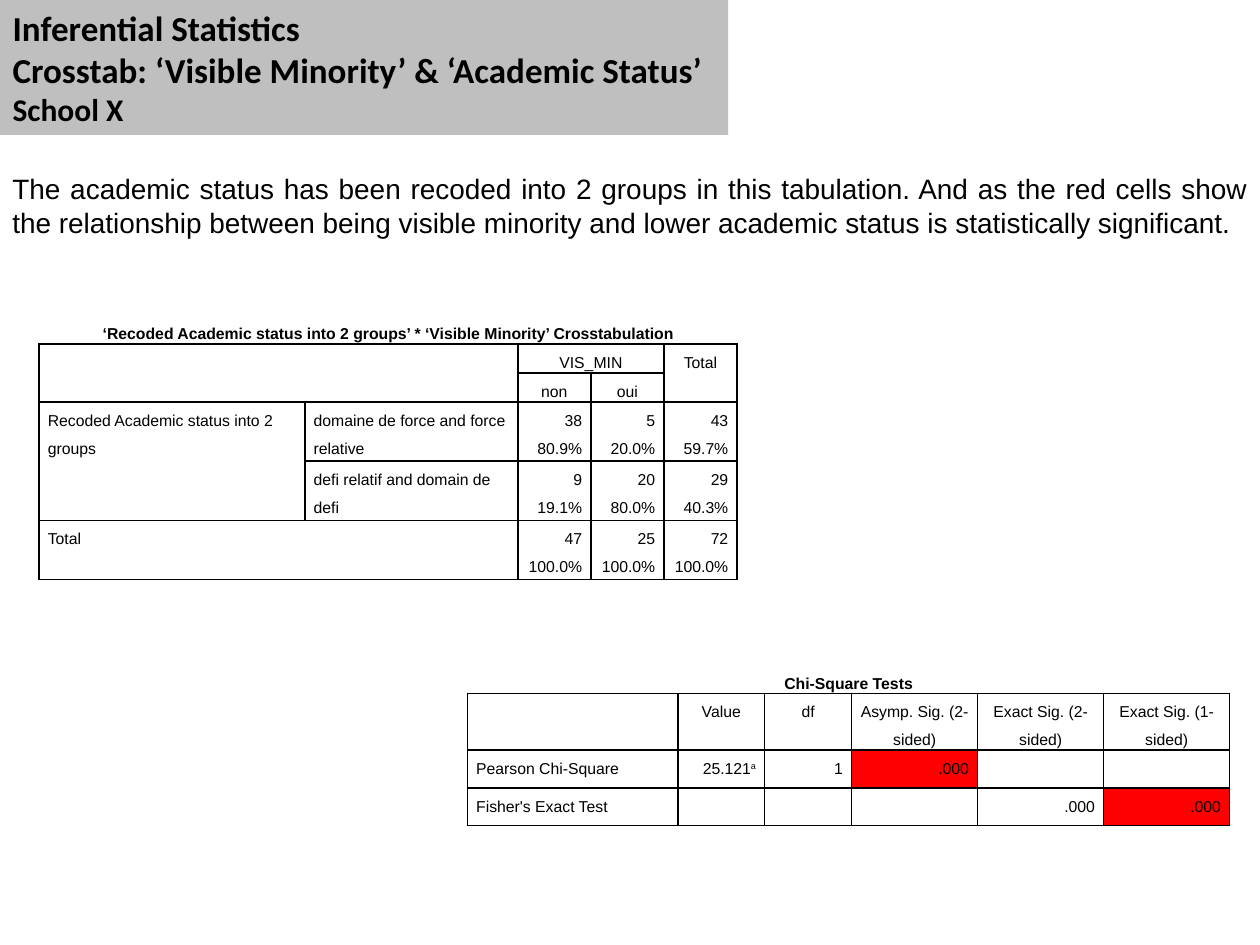
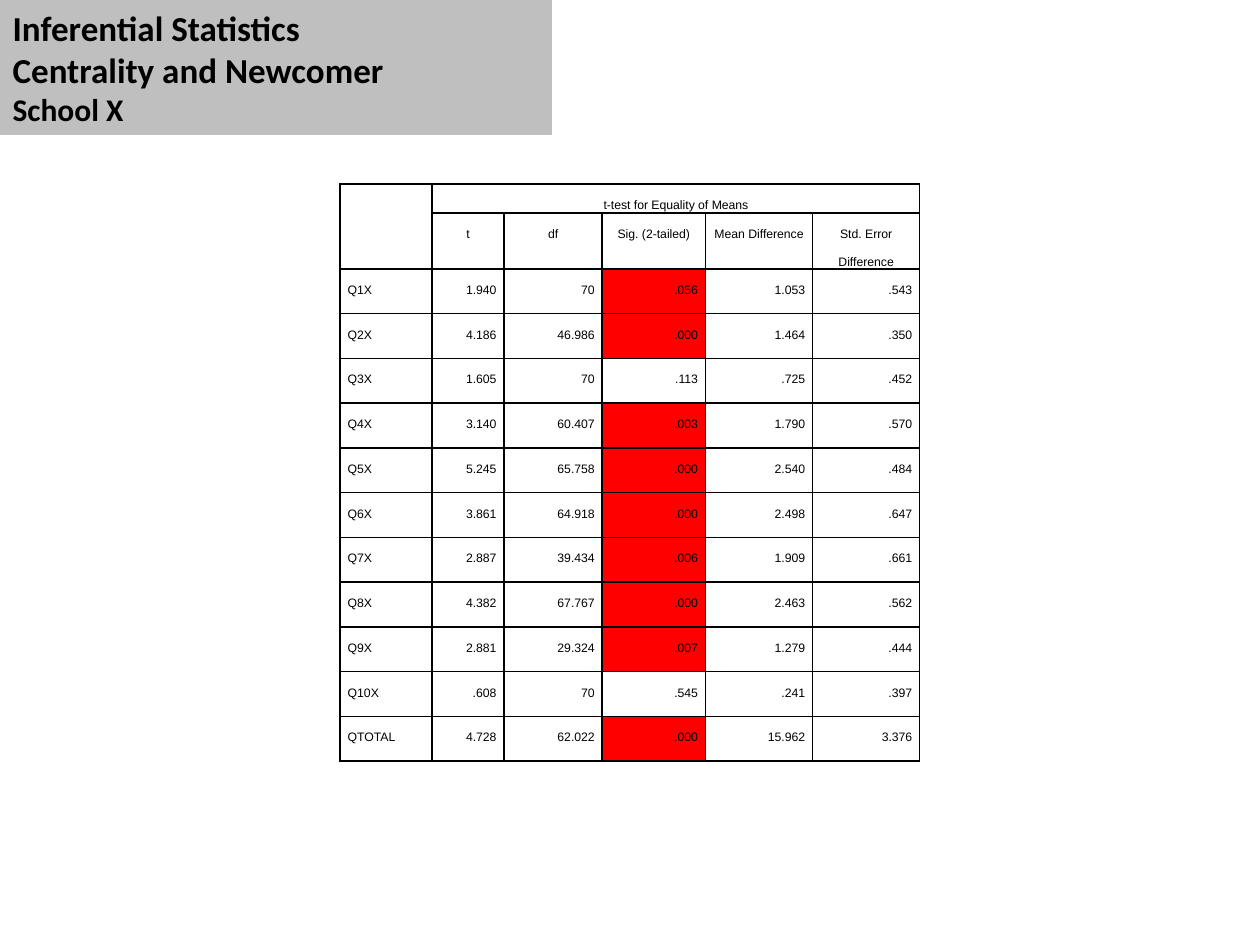
"""Build two slides of inferential statistics: a crosstab, a chi-square table and a t-test table."""
import lxml.etree
import pptx
import pptx.dml.color
import pptx.enum.text
import pptx.oxml.ns
import pptx.util
from dataclasses import dataclass

Inches = pptx.util.Inches
Pt = pptx.util.Pt
Align = pptx.enum.text.PP_ALIGN
Anchor = pptx.enum.text.MSO_ANCHOR
Fit = pptx.enum.text.MSO_AUTO_SIZE
qn = pptx.oxml.ns.qn


@dataclass(frozen=True)
class Theme:
    ink: str = "000000"
    band: str = "BFBFBF"
    alert: str = "FF0000"
    head: str = "Calibri"
    body: str = "Arial"
    title: int = 20
    school: int = 18
    note: int = 16
    cell: int = 9
    small: int = 7
    lead: int = 16
    rule: int = 1


theme = Theme()


def add_run(para, text, face, size, bold=False):
    run = para.add_run()
    run.text = text
    run.font.name = face
    run.font.size = Pt(size)
    run.font.bold = bold
    run.font.color.rgb = pptx.dml.color.RGBColor.from_string(theme.ink)
    return run


def add_edge(cell, side, shown):
    props = cell._tc.get_or_add_tcPr()
    line = lxml.etree.SubElement(props, qn("a:ln" + side), w=str(Pt(theme.rule)))
    fill = lxml.etree.SubElement(line, qn("a:solidFill" if shown else "a:noFill"))
    if shown:
        lxml.etree.SubElement(fill, qn("a:srgbClr"), val=theme.ink)


deck = pptx.Presentation()
deck.slide_width = Inches(10)
deck.slide_height = Inches(7.5)

slides = []
for topic, width in [
    ("Crosstab: ‘Visible Minority’ & ‘Academic Status’", 5.78),
    ("Centrality and Newcomer", 4.38),
]:
    slide = deck.slides.add_slide(deck.slide_layouts[5])
    slides.append(slide)
    title = slide.shapes.title
    title.left, title.top = 0, 0
    title.width, title.height = Inches(width), Inches(1.07)
    title.fill.solid()
    title.fill.fore_color.rgb = pptx.dml.color.RGBColor.from_string(theme.band)
    frame = title.text_frame
    frame.word_wrap = True
    frame.auto_size = Fit.SHAPE_TO_FIT_TEXT
    frame.vertical_anchor = Anchor.TOP
    for num, (text, size) in enumerate([
        ("Inferential Statistics", theme.title),
        (topic, theme.title),
        ("School X", theme.school),
    ]):
        para = frame.add_paragraph() if num else frame.paragraphs[0]
        para.alignment = Align.LEFT
        add_run(para, text, theme.head, size, True)

note = slides[0].shapes.add_textbox(0, Inches(1.31), Inches(10), Inches(0.64))
frame = note.text_frame
frame.word_wrap = True
frame.auto_size = Fit.SHAPE_TO_FIT_TEXT
frame.vertical_anchor = Anchor.MIDDLE
frame.paragraphs[0].alignment = Align.JUSTIFY
add_run(
    frame.paragraphs[0],
    "The academic status has been recoded into 2 groups in this tabulation. "
    "And as the red cells show the relationship between being visible minority "
    "and lower academic status is statistically significant.",
    theme.body, theme.note,
)

cross = dict(
    slide=slides[0], at=(0.31, 2.5), cols=[2.11, 1.69] + [0.58] * 3,
    rows=[0.23] * 3 + [0.47] * 3, heads=3, labels=2, named=True,
    size=theme.cell, pad=0.07, red=[],
    spans=[(0, 0, 0, 4), (1, 0, 2, 1), (1, 2, 1, 3), (1, 4, 2, 4), (3, 0, 4, 0), (5, 0, 5, 1)],
    data=[
        ["‘Recoded Academic status into 2 groups’ * ‘Visible Minority’ Crosstabulation", "", "", "", ""],
        ["", "", "VIS_MIN", "", "Total"],
        ["", "", "non", "oui", ""],
        ["Recoded Academic status into 2 groups", "domaine de force and force relative",
         "38\n80.9%", "5\n20.0%", "43\n59.7%"],
        ["", "defi relatif and domain de defi", "9\n19.1%", "20\n80.0%", "29\n40.3%"],
        ["Total", "", "47\n100.0%", "25\n100.0%", "72\n100.0%"],
    ],
)

chi = dict(
    slide=slides[0], at=(3.71, 5.28), cols=[1.67] + [0.69] * 2 + [1] * 3,
    rows=[0.22, 0.45, 0.22, 0.22], heads=2, labels=1, named=True,
    size=theme.cell, pad=0.07, red=[(2, 3), (3, 5)],
    spans=[(0, 0, 0, 5)],
    data=[
        ["Chi-Square Tests", "", "", "", "", ""],
        ["", "Value", "df", "Asymp. Sig. (2-sided)", "Exact Sig. (2-sided)", "Exact Sig. (1-sided)"],
        ["Pearson Chi-Square", "25.121^a", "1", ".000", "", ""],
        ["Fisher's Exact Test", "", "", "", ".000", ".000"],
    ],
)

means = [
    ["Q1X", "1.940", "70", ".056", "1.053", ".543"],
    ["Q2X", "4.186", "46.986", ".000", "1.464", ".350"],
    ["Q3X", "1.605", "70", ".113", ".725", ".452"],
    ["Q4X", "3.140", "60.407", ".003", "1.790", ".570"],
    ["Q5X", "5.245", "65.758", ".000", "2.540", ".484"],
    ["Q6X", "3.861", "64.918", ".000", "2.498", ".647"],
    ["Q7X", "2.887", "39.434", ".006", "1.909", ".661"],
    ["Q8X", "4.382", "67.767", ".000", "2.463", ".562"],
    ["Q9X", "2.881", "29.324", ".007", "1.279", ".444"],
    ["Q10X", ".608", "70", ".545", ".241", ".397"],
    ["QTOTAL", "4.728", "62.022", ".000", "15.962", "3.376"],
]
ttest = dict(
    slide=slides[1], at=(2.7, 1.46), cols=[0.73, 0.57, 0.78, 0.82, 0.85, 0.85],
    rows=[0.23, 0.44] + [3.91 / len(means)] * len(means), heads=2, labels=1, named=False,
    size=theme.small, pad=0.06,
    red=[(row, 3) for row, line in enumerate(means, 2) if float(line[3]) < 0.1],
    spans=[(0, 0, 1, 0), (0, 1, 0, 5)],
    data=[
        ["", "t-test for Equality of Means", "", "", "", ""],
        ["", "t", "df", "Sig. (2-tailed)", "Mean Difference", "Std. Error Difference"],
    ] + means,
)

for plan in [cross, chi, ttest]:
    left, top = plan["at"]
    grid = plan["slide"].shapes.add_table(
        len(plan["rows"]), len(plan["cols"]), Inches(left), Inches(top),
        Inches(sum(plan["cols"])), Inches(sum(plan["rows"])),
    ).table
    grid.first_row = False
    grid.horz_banding = False
    for col, width in zip(grid.columns, plan["cols"]):
        col.width = Inches(width)
    for row, height in zip(grid.rows, plan["rows"]):
        row.height = Inches(height)
    for r, line in enumerate(plan["data"]):
        for c, text in enumerate(line):
            cell = grid.cell(r, c)
            title = plan["named"] and r == 0
            cell.margin_left = cell.margin_right = Inches(plan["pad"])
            cell.margin_top = cell.margin_bottom = 0
            for side in "LRTB":
                add_edge(cell, side, side == "B" or not title)
            if (r, c) in plan["red"]:
                cell.fill.solid()
                cell.fill.fore_color.rgb = pptx.dml.color.RGBColor.from_string(theme.alert)
            else:
                cell.fill.background()
            for num, part in enumerate(text.split("\n")):
                frame = cell.text_frame
                para = frame.add_paragraph() if num else frame.paragraphs[0]
                para.line_spacing = Pt(theme.lead)
                if r < plan["heads"]:
                    para.alignment = Align.CENTER
                elif c < plan["labels"]:
                    para.alignment = Align.LEFT
                else:
                    para.alignment = Align.RIGHT
                base, _, mark = part.partition("^")
                if base:
                    add_run(para, base, theme.body, plan["size"], title)
                if mark:
                    run = add_run(para, mark, theme.body, plan["size"])
                    run.font._element.set("baseline", "30000")
    for r, c, down, over in plan["spans"]:
        grid.cell(r, c).merge(grid.cell(down, over))

deck.save("out.pptx")
